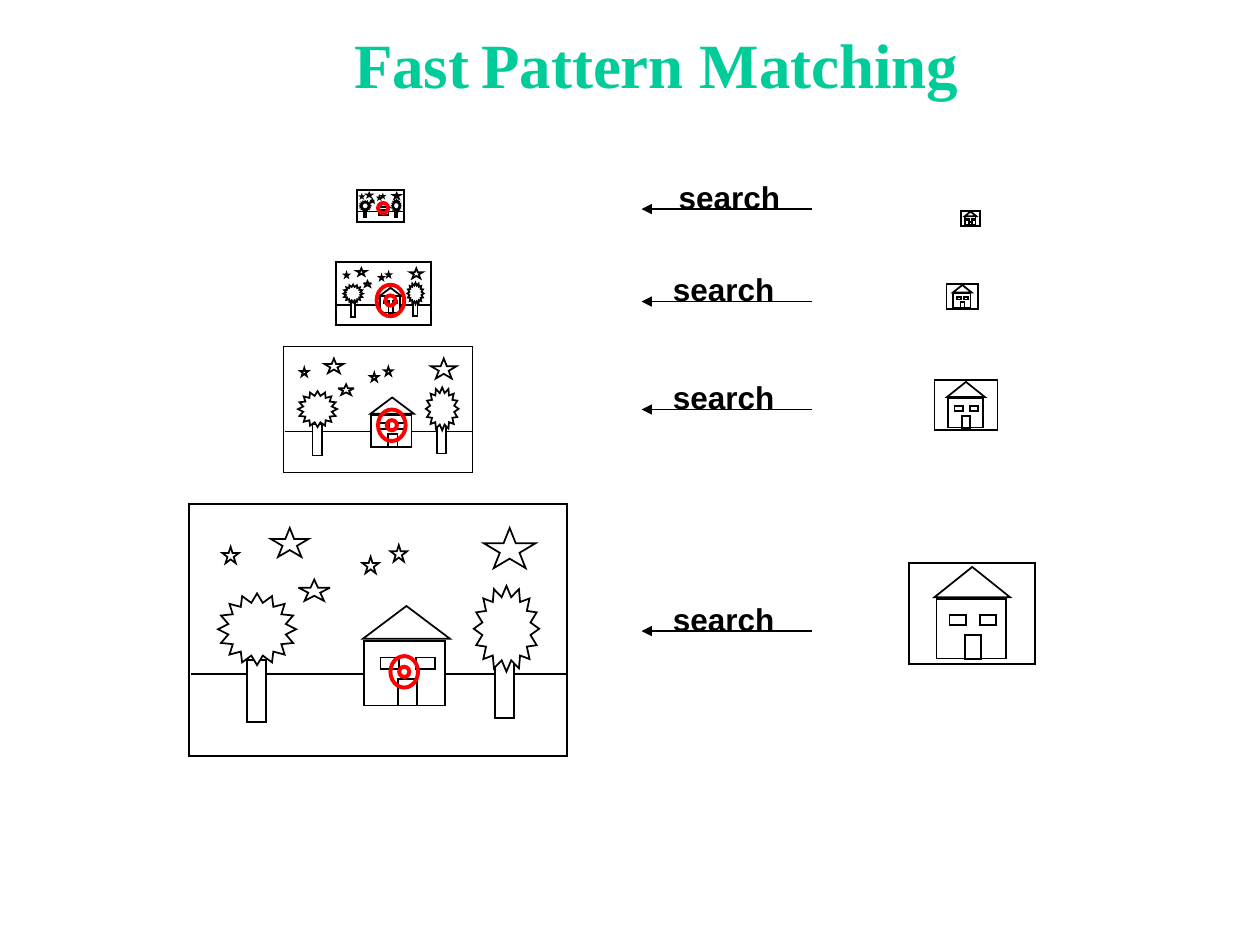
"""Build the "Fast Pattern Matching" slide: a house template searched at four scales."""
from dataclasses import dataclass

from lxml import etree
from pptx import Presentation
from pptx.dml.color import RGBColor
from pptx.enum.shapes import MSO_CONNECTOR, MSO_SHAPE
from pptx.enum.text import MSO_ANCHOR, MSO_AUTO_SIZE, PP_ALIGN
from pptx.oxml.ns import qn
from pptx.util import Pt

RECTANGLE = MSO_SHAPE.RECTANGLE
TRIANGLE = MSO_SHAPE.ISOSCELES_TRIANGLE
STAR = MSO_SHAPE.STAR_5_POINT
CROWN = MSO_SHAPE.STAR_16_POINT
ELLIPSE = MSO_SHAPE.OVAL
STRAIGHT = MSO_CONNECTOR.STRAIGHT
CENTER = PP_ALIGN.CENTER
LEFT = PP_ALIGN.LEFT


@dataclass(frozen=True)
class Theme:
    """Colours, fonts and sizes."""
    ink: RGBColor = RGBColor(0, 0, 0)
    paper: RGBColor = RGBColor(255, 255, 255)
    title: RGBColor = RGBColor(0, 204, 153)
    match: RGBColor = RGBColor(255, 0, 0)
    title_font: str = "Times New Roman"
    label_font: str = "Arial"
    title_size: float = 36
    space_size: float = 24
    label_size: float = 18
    line: float = 1
    match_line: float = 2.25


THEME = Theme()
TITLE_BOX = (130.3, 10.8, 489.6, 50.4)
GROUND = (1.4, 97.2, 216, 97.2)
SCENE = [
    (RECTANGLE, 0, 0, 216, 144, False),
    (RECTANGLE, 100.1, 78.5, 46.1, 36.7, True),
    (TRIANGLE, 99.4, 58.3, 49.7, 18.7, False),
    (STAR, 46.8, 13.7, 21.6, 16.6, False),
    (STAR, 115.2, 23.5, 9.4, 9.4, False),
    (STAR, 168.5, 13.7, 29.5, 23, False),
    (RECTANGLE, 33.1, 89.3, 10.8, 35.3, True),
    (RECTANGLE, 175, 87.1, 10.8, 35.3, True),
    (CROWN, 16.6, 51.1, 44.6, 41, True),
    (STAR, 99.1, 30.2, 9.4, 9.4, False),
    (STAR, 19.1, 24.5, 9.4, 9.4, False),
    (STAR, 62.6, 43.2, 18, 12.2, False),
    (RECTANGLE, 119.5, 100.1, 10.8, 15.1, False),
    (RECTANGLE, 109.4, 87.8, 10.8, 6.5, False),
    (RECTANGLE, 129.6, 87.8, 10.8, 6.5, False),
    (CROWN, 162.7, 46.8, 37.4, 49, True),
]
TEMPLATE = [
    (RECTANGLE, 0, 0, 72, 57.6, False),
    (RECTANGLE, 15.5, 20.6, 39.6, 34, False),
    (TRIANGLE, 14.4, 2.2, 43.2, 17.3, False),
    (RECTANGLE, 31.7, 41, 9.4, 13.7, False),
    (RECTANGLE, 23, 29.5, 9.4, 5.8, False),
    (RECTANGLE, 40.3, 29.5, 9.4, 5.8, False),
]
OUTER_RING = (15.8, 18)
INNER_RING = (5.8, 5.8)
ARROW_START, ARROW_END = 463.9, 366.6
LABEL_RISE, LABEL_WIDTH, LABEL_HEIGHT = 21.5, 74.9, 28.8

LEVELS = [
    dict(scene=(203.8, 108.7, 0.125), template=(549.2, 120.6, 0.15), arrow=119.5,
         label=(379.4, CENTER), match=(218.9, 118.9), rings=[INNER_RING]),
    dict(scene=(192.1, 149.9, 0.25), template=(540.9, 162.3, 0.25), arrow=172.3,
         label=(377.4, LEFT), match=(223.1, 171.7), rings=[OUTER_RING, INNER_RING]),
    dict(scene=(162, 198, 0.5), template=(534, 217.1, 0.5), arrow=234,
         label=(377.4, LEFT), match=(223.9, 243), rings=[OUTER_RING, INNER_RING]),
    dict(scene=(108, 288, 1), template=(519.6, 321.8, 1), arrow=360.6,
         label=(377.4, LEFT), match=(231, 383.9), rings=[OUTER_RING, INNER_RING]),
]


def add_outline(shapes, kind, box, filled=False, color=THEME.ink, width=THEME.line):
    shape = shapes.add_shape(kind, *map(Pt, box))
    shape.shadow.inherit = False
    if filled:
        shape.fill.solid()
        shape.fill.fore_color.rgb = THEME.paper
    else:
        shape.fill.background()
    shape.line.color.rgb = color
    shape.line.width = Pt(width)
    etree.SubElement(shape.line._get_or_add_ln(), qn("a:miter"), lim="800000")


def add_line(shapes, ends, arrow=False):
    line = shapes.add_connector(STRAIGHT, *map(Pt, ends))
    line.line.color.rgb = THEME.ink
    line.line.width = Pt(THEME.line)
    if arrow:
        etree.SubElement(line.line._get_or_add_ln(), qn("a:tailEnd"), type="triangle")
    etree.SubElement(line._element.spPr, qn("a:effectLst"))


def add_drawing(slide, parts, left, top, scale, ground=None):
    shapes = slide.shapes.add_group_shape().shapes
    if ground:
        x1, y1, x2, y2 = (value * scale for value in ground)
        add_line(shapes, (left + x1, top + y1, left + x2, top + y2))
    for kind, x, y, width, height, filled in parts:
        box = (left + x * scale, top + y * scale, width * scale, height * scale)
        add_outline(shapes, kind, box, filled)


def add_search(slide, y, left, alignment):
    shapes = slide.shapes.add_group_shape().shapes
    add_line(shapes, (ARROW_START, y, ARROW_END, y), arrow=True)
    box = (left, y - LABEL_RISE, LABEL_WIDTH, LABEL_HEIGHT)
    frame = shapes.add_textbox(*map(Pt, box)).text_frame
    frame.word_wrap = False
    frame.auto_size = MSO_AUTO_SIZE.SHAPE_TO_FIT_TEXT
    paragraph = frame.paragraphs[0]
    paragraph.text = "search"
    paragraph.alignment = alignment
    set_font(paragraph.font, THEME.label_font, THEME.label_size, THEME.ink)


def set_font(font, name, size, color):
    font.name, font.size, font.bold = name, Pt(size), True
    font.color.rgb = color


def add_title(slide):
    title = slide.shapes.title
    title.left, title.top, title.width, title.height = map(Pt, TITLE_BOX)
    title.text_frame.vertical_anchor = MSO_ANCHOR.TOP
    title.text_frame.auto_size = MSO_AUTO_SIZE.NONE
    paragraph = title.text_frame.paragraphs[0]
    paragraph.alignment = CENTER
    heading = (THEME.title_font, THEME.title_size, THEME.title)
    space = (THEME.label_font, THEME.space_size, THEME.ink)
    for text, style in [("Fast", heading), (" ", space), ("Pattern Matching", heading)]:
        run = paragraph.add_run()
        run.text = text
        set_font(run.font, *style)


def main():
    presentation = Presentation()
    presentation.slide_width, presentation.slide_height = Pt(720), Pt(540)
    slide = presentation.slides.add_slide(presentation.slide_layouts[5])
    add_title(slide)
    for level in reversed(LEVELS):
        add_drawing(slide, TEMPLATE, *level["template"])
        add_drawing(slide, SCENE, *level["scene"], ground=GROUND)
        add_search(slide, level["arrow"], *level["label"])
        x, y = level["match"]
        for width, height in level["rings"]:
            box = (x - width / 2, y - height / 2, width, height)
            add_outline(slide.shapes, ELLIPSE, box, color=THEME.match, width=THEME.match_line)
    presentation.save("out.pptx")


if __name__ == "__main__":
    main()
